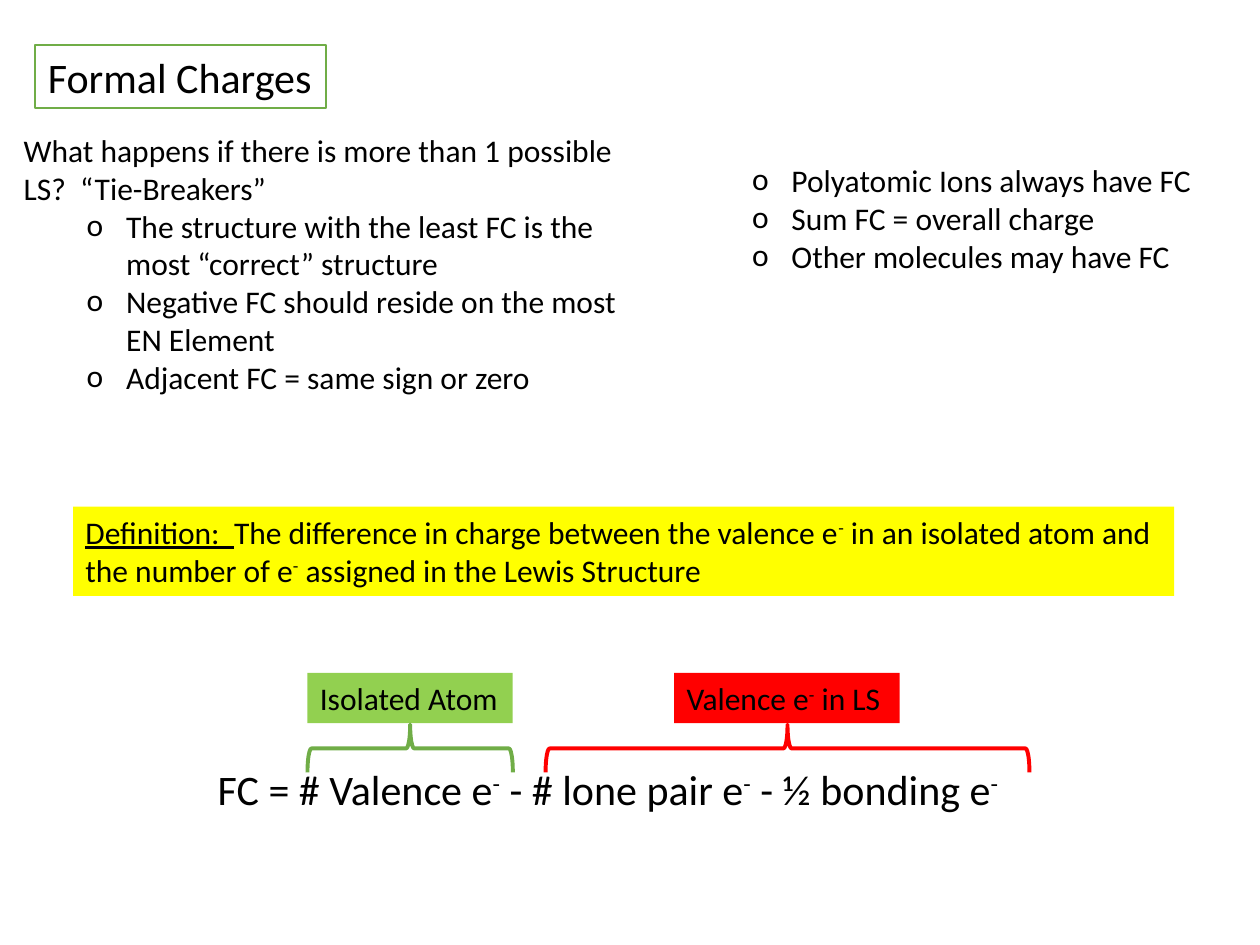
from dataclasses import dataclass

import pptx
import pptx.dml.color
import pptx.enum.shapes
import pptx.enum.text
import pptx.oxml
import pptx.oxml.ns
import pptx.util

CELL = 0.1  # inches; the slide is a grid of 100 columns by 75 rows
FONT = "Calibri"
BLACK, WHITE, YELLOW = "000000", "FFFFFF", "FFFF00"
GREEN, LIME, RED = "70AD47", "92D050", "FF0000"
HANG = 3.13


@dataclass(frozen=True)
class Area:
    col: float
    row: float
    cols: float
    rows: float


@dataclass(frozen=True)
class Run:
    text: str
    high: bool = False
    under: bool = False


@dataclass(frozen=True)
class Para:
    runs: tuple[Run, ...]
    bullet: bool = False
    level: int = 0


@dataclass(frozen=True)
class Box:
    area: Area
    paras: tuple[Para, ...]
    fill: str | None = None
    size: int = 18
    wrap: bool = False
    grow: bool = True


@dataclass(frozen=True)
class Brace:
    """A brace that opens downward; area is what it covers once turned."""
    area: Area
    color: str


def grid(cells: float) -> int:
    return pptx.util.Inches(cells * CELL)


def rgb(code: str) -> pptx.dml.color.RGBColor:
    return pptx.dml.color.RGBColor.from_string(code)


def place(shape, area: Area) -> None:
    shape.left, shape.top = grid(area.col), grid(area.row)
    shape.width, shape.height = grid(area.cols), grid(area.rows)


def mark(para, level: int) -> None:
    """Give the paragraph a hanging round bullet."""
    props = para._p.get_or_add_pPr()
    props.set("marL", str(grid(HANG + 5 * level)))
    props.set("indent", str(-grid(HANG)))
    names = pptx.oxml.ns.nsdecls("a")
    for tag in (f'buFont {names} typeface="{FONT}"', f'buChar {names} char="o"'):
        props.append(pptx.oxml.parse_xml(f"<a:{tag}/>"))


def write(shape, box: Box) -> None:
    fit = pptx.enum.text.MSO_AUTO_SIZE
    frame = shape.text_frame
    frame.word_wrap = box.wrap
    frame.auto_size = fit.SHAPE_TO_FIT_TEXT if box.grow else fit.NONE
    frame.vertical_anchor = pptx.enum.text.MSO_ANCHOR.TOP
    for i, item in enumerate(box.paras):
        para = frame.add_paragraph() if i else frame.paragraphs[0]
        para.alignment = pptx.enum.text.PP_ALIGN.LEFT
        para.level = item.level
        if item.bullet:
            mark(para, item.level)
        for part in item.runs:
            run = para.add_run()
            run.text = part.text
            font = run.font
            font.name, font.size = FONT, pptx.util.Pt(box.size)
            font.color.rgb = rgb(BLACK)
            if part.under:
                font.underline = True
            if part.high:
                run._r.get_or_add_rPr().set("baseline", "30000")


def fill_box(shape, box: Box) -> None:
    place(shape, box.area)
    if box.fill:
        shape.fill.solid()
        shape.fill.fore_color.rgb = rgb(box.fill)
    write(shape, box)


def draw_title(slide, box: Box) -> None:
    title = slide.shapes.title
    fill_box(title, box)
    title.line.color.rgb = rgb(GREEN)
    title.line.width = pptx.util.Pt(1)


def draw_box(slide, box: Box) -> None:
    fill_box(slide.shapes.add_textbox(0, 0, 0, 0), box)


def draw_brace(slide, brace: Brace) -> None:
    area = brace.area
    shift = (area.cols - area.rows) / 2
    shape = slide.shapes.add_shape(
        pptx.enum.shapes.MSO_SHAPE.LEFT_BRACE,
        grid(area.col + shift), grid(area.row - shift),
        grid(area.rows), grid(area.cols))
    shape.rotation = 90
    shape.shadow.inherit = False
    shape.fill.background()
    shape.line.color.rgb = rgb(brace.color)
    shape.line.width = pptx.util.Pt(2.25)


def line(text: str) -> Para:
    return Para((Run(text),))


def points(level: int, *texts: str) -> tuple[Para, ...]:
    return tuple(Para((Run(text),), True, level) for text in texts)


MINUS = Run("-", high=True)
TITLE = Box(Area(2.8, 3.6, 23.1, 5), (line("Formal Charges"),), WHITE, 24,
            grow=False)
BOXES = (
    Box(Area(5.8, 40.2, 87.4, 7.1), (Para((
        Run("Definition:  ", under=True),
        Run("The difference in charge between the valence e"), MINUS,
        Run(" in an isolated atom and the number of e"), MINUS,
        Run(" assigned in the Lewis Structure"))),), YELLOW, wrap=True),
    Box(Area(16.3, 60.1, 66.3, 5), (Para((
        Run("FC = # Valence e"), MINUS,
        Run(" - # lone pair e"), MINUS,
        Run(" - ½ bonding e"), MINUS)),), size=24),
    Box(Area(24.4, 53.4, 16.3, 4), (line("Isolated Atom"),), LIME),
    Box(Area(53.5, 53.4, 17.9, 4),
        (Para((Run("Valence e"), MINUS, Run(" in LS"))),), RED),
    Box(Area(58.7, 12.3, 37.2, 10.1), points(
        0, "Polyatomic Ions always have FC", "Sum FC = overall charge",
        "Other molecules may have FC")),
    Box(Area(0.9, 9.9, 50, 22.2), (
        line("What happens if there is more than 1 possible LS?  “Tie-Breakers”"),
        *points(
            1, "The structure with the least FC is the most “correct” structure",
            "Negative FC should reside on the most EN Element",
            "Adjacent FC = same sign or zero")), wrap=True),
)
BRACES = (
    Brace(Area(24.4, 57.5, 16.3, 3.8), GREEN),
    Brace(Area(43.3, 57.5, 38.4, 3.8), RED),
)


def main() -> None:
    deck = pptx.Presentation()
    deck.slide_width, deck.slide_height = grid(100), grid(75)
    slide = deck.slides.add_slide(deck.slide_layouts.get_by_name("Title Only"))
    draw_title(slide, TITLE)
    for box in BOXES:
        draw_box(slide, box)
    for brace in BRACES:
        draw_brace(slide, brace)
    deck.save("out.pptx")


if __name__ == "__main__":
    main()
